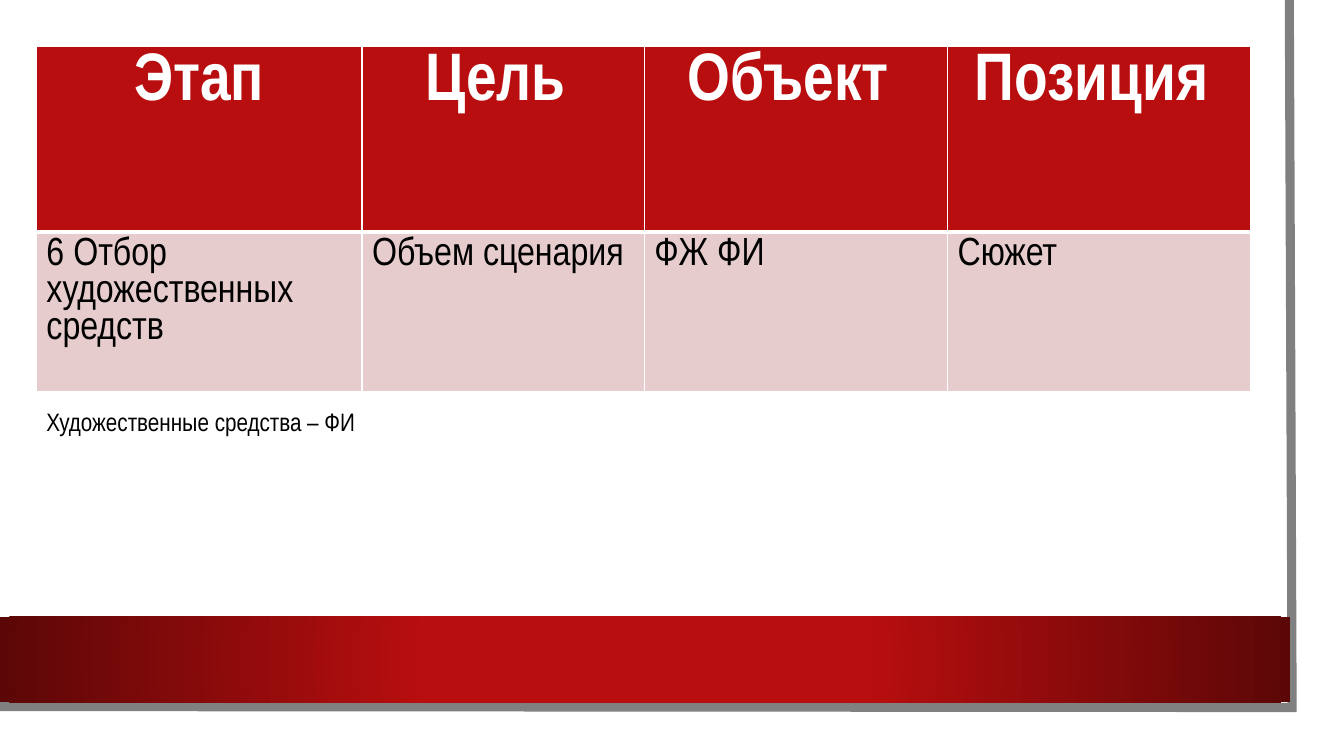
from dataclasses import dataclass

from lxml.etree import SubElement
from pptx import Presentation
from pptx.dml.color import RGBColor
from pptx.enum.shapes import MSO_SHAPE
from pptx.enum.text import MSO_ANCHOR, PP_ALIGN
from pptx.oxml import parse_xml
from pptx.oxml.ns import nsdecls, qn
from pptx.util import Pt


@dataclass(frozen=True)
class Theme:
    font: str = "Arial Narrow"
    white: str = "FFFFFF"
    black: str = "000000"
    red: str = "B80E0F"
    dark_red: str = "5C0707"
    pink: str = "E6CCCC"
    gray: str = "808080"
    header_size: int = 48
    body_size: int = 28
    note_size: int = 18


THEME = Theme()
LEFT, WIDTH = 26, 867
COLUMN_WIDTHS = [232.6, 201.6, 216.7, 216.7]
ROW_HEIGHTS = [132.3, 113.8]
HEADERS = ["Этап", "Цель ", "Объект ", "Позиция "]
STAGE = ["6 Отбор художественных средств", "Объем сценария", "ФЖ ФИ", "Сюжет"]
NOTE = "Художественные средства – ФИ"
HEADER_FORMAT = {"size": Pt(THEME.header_size), "bold": True}
BODY_FORMAT = {"size": Pt(THEME.body_size), "bold": False}
NOTE_FORMAT = {"size": Pt(THEME.note_size)}


def write(frame, text, color, font_format, align=PP_ALIGN.LEFT):
    para = frame.paragraphs[0]
    para.alignment = align
    span = para.add_run()
    span.text = text
    for name, value in {"name": THEME.font, **font_format}.items():
        setattr(span.font, name, value)
    span.font.color.rgb = RGBColor.from_string(color)


def add_rectangle(page, left, top, width, height):
    box = page.shapes.add_shape(
        MSO_SHAPE.RECTANGLE, Pt(left), Pt(top), Pt(width), Pt(height))
    box.shadow.inherit = False
    box.line.fill.background()
    return box


def add_sheet(page):
    sheet = add_rectangle(page, 0, 0, 943.2, 523.4)
    sheet.fill.solid()
    sheet.fill.fore_color.rgb = RGBColor.from_string(THEME.white)


def add_sheet_edge(page):
    builder = page.shapes.build_freeform(Pt(921), 0)
    builder.add_line_segments(
        [(Pt(923), Pt(505.4)), (Pt(-2), Pt(504.7))], close=False)
    edge = builder.convert_to_shape()
    edge.shadow.inherit = False
    edge.fill.background()
    edge.line.width = Pt(6.5)
    edge.line.color.rgb = RGBColor.from_string(THEME.gray)
    edge.line._get_or_add_ln().append(
        parse_xml(f'<a:miter {nsdecls("a")} lim="800000"/>'))


def add_band(page):
    """Add the bottom band, bright in the middle and dark at both ends."""
    band = add_rectangle(page, 0, 440.6, 921.6, 61.2)
    band.fill.gradient()
    stops = zip(band.fill.gradient_stops,
                [(0.34, THEME.red), (1, THEME.dark_red)])
    for stop, (position, color) in stops:
        stop.position = position
        stop.color.rgb = RGBColor.from_string(color)
    linear = band._element.spPr.find(qn("a:gradFill")).find(qn("a:lin"))
    linear.getparent().replace(linear, parse_xml(
        f'<a:path {nsdecls("a")} path="circle">'
        '<a:fillToRect l="50000" t="50000" r="50000" b="50000"/></a:path>'))


def add_borders(cell, top, bottom):
    """Draw white cell borders; the side borders are one point wide."""
    properties = cell._tc.get_or_add_tcPr()
    widths = {"lnL": 1, "lnR": 1, "lnT": top, "lnB": bottom}
    for side, width in widths.items():
        line = SubElement(properties, qn(f"a:{side}"), w=str(Pt(width)))
        fill = SubElement(line, qn("a:solidFill"))
        SubElement(fill, qn("a:srgbClr"), val=THEME.white)


def fill_row(table, row, texts, fill, borders, *text_style):
    for column, text in enumerate(texts):
        cell = table.cell(row, column)
        add_borders(cell, *borders)
        cell.fill.solid()
        cell.fill.fore_color.rgb = RGBColor.from_string(fill)
        cell.vertical_anchor = MSO_ANCHOR.TOP
        write(cell.text_frame, text, *text_style)


def add_stage_table(page):
    table = page.shapes.add_table(
        len(ROW_HEIGHTS), len(COLUMN_WIDTHS), Pt(LEFT), Pt(33.3),
        Pt(sum(COLUMN_WIDTHS)), Pt(sum(ROW_HEIGHTS))).table
    for column, width in zip(table.columns, COLUMN_WIDTHS):
        column.width = Pt(width)
    for row, height in zip(table.rows, ROW_HEIGHTS):
        row.height = Pt(height)
    fill_row(table, 0, HEADERS, THEME.red, (1, 3),
             THEME.white, HEADER_FORMAT, PP_ALIGN.CENTER)
    fill_row(table, 1, STAGE, THEME.pink, (3, 1), THEME.black, BODY_FORMAT)


def add_note(page):
    box = page.shapes.add_textbox(Pt(LEFT), Pt(286.6), Pt(WIDTH), Pt(29))
    box.text_frame.word_wrap = True
    write(box.text_frame, NOTE, THEME.black, NOTE_FORMAT)


def main():
    deck = Presentation()
    deck.slide_width, deck.slide_height = Pt(960), Pt(540)
    page = deck.slides.add_slide(deck.slide_layouts[6])
    add_sheet(page)
    add_sheet_edge(page)
    add_band(page)
    add_stage_table(page)
    add_note(page)
    deck.save("out.pptx")


if __name__ == "__main__":
    main()
